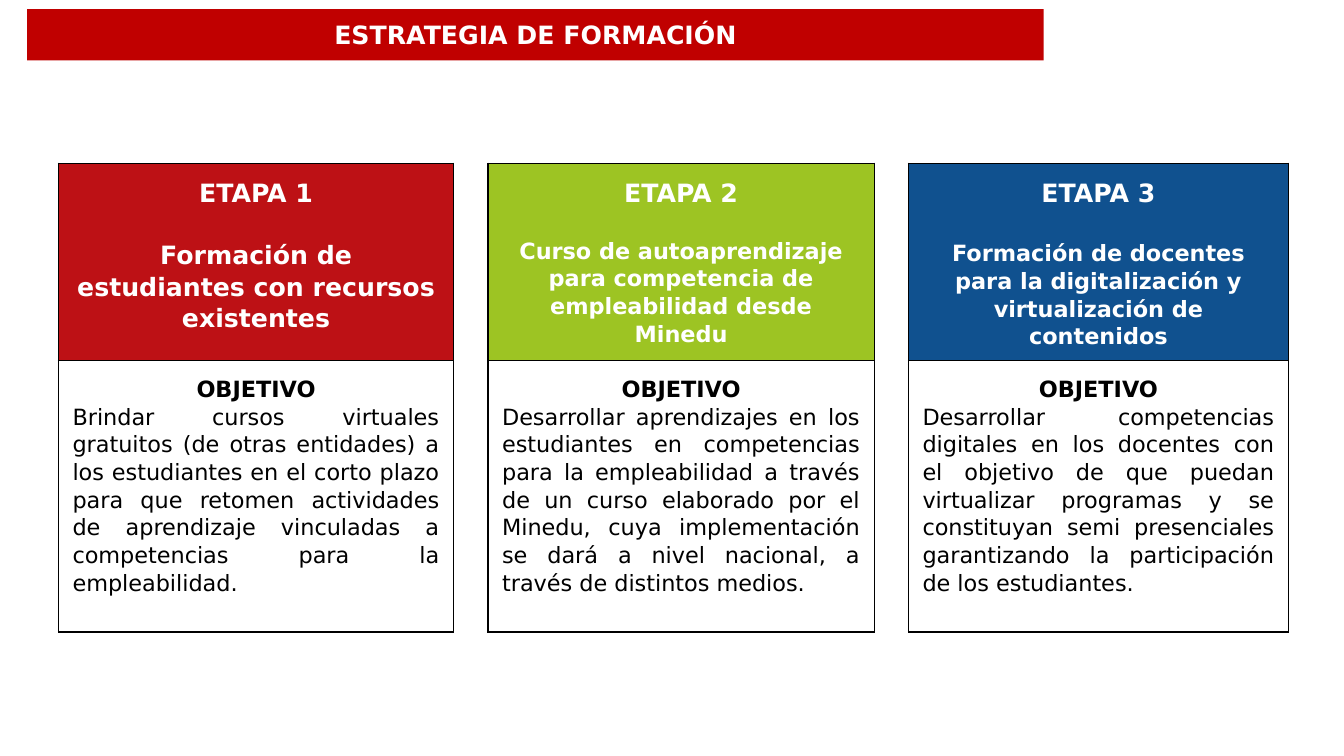
from dataclasses import dataclass
from pptx import Presentation
from pptx.dml.color import RGBColor as RGB
from pptx.enum.shapes import MSO_SHAPE as SHAPE
from pptx.enum.text import MSO_ANCHOR as ANCHOR, PP_ALIGN as ALIGN
from pptx.oxml import parse_xml
from pptx.oxml.ns import nsdecls
from pptx.util import Inches, Pt


@dataclass(frozen=True)
class Theme:
    font: str = "DejaVu Sans"
    title: str = "C00000"
    stages: tuple = ("BD1115", "9DC423", "10518F")
    white: str = "FFFFFF"
    black: str = "000000"
    big: int = 18
    body: int = 16
    edge: int = 1


theme = Theme()


def style(para, text, size, color, bold=True, align=ALIGN.CENTER):
    para.text = text
    para.alignment = align
    font = para.font
    font.name, font.size, font.bold = theme.font, Pt(size), bold
    font.color.rgb = RGB.from_string(color)


def add_box(left, top, width, height, fill):
    """Add a one-cell table with a black border and return its two paragraphs."""
    table = slide.shapes.add_table(1, 1, Inches(left), Inches(top),
                                   Inches(width), Inches(height)).table
    table.first_row = table.horz_banding = False
    cell = table.cell(0, 0)
    cell.margin_left = cell.margin_right = Inches(0.14)
    cell.margin_top = cell.margin_bottom = Inches(0.14)
    props = cell._tc.get_or_add_tcPr()
    for side in "LRTB":
        props.append(parse_xml(
            f'<a:ln{side} {nsdecls("a")} w="{Pt(theme.edge)}"><a:solidFill>'
            f'<a:srgbClr val="{theme.black}"/></a:solidFill></a:ln{side}>'))
    cell.fill.solid()
    cell.fill.fore_color.rgb = RGB.from_string(fill)
    frame = cell.text_frame
    paras = frame.paragraphs[0], frame.add_paragraph()
    for para in paras:
        para.line_spacing = 1.07
    return paras


# width, heading size, gap above heading in points, heading, goal
stages = [
    (3.92, theme.big, 22, "Formación de estudiantes con recursos existentes",
     "Brindar cursos virtuales gratuitos (de otras entidades) a los estudiantes "
     "en el corto plazo para que retomen actividades de aprendizaje vinculadas "
     "a competencias para la empleabilidad."),
    (3.83, theme.body, 20,
     "Curso de autoaprendizaje para competencia de empleabilidad desde Minedu",
     "Desarrollar aprendizajes en los estudiantes en competencias para la "
     "empleabilidad a través de un curso elaborado por el Minedu, cuya "
     "implementación se dará a nivel nacional, a través de distintos medios."),
    (3.77, theme.body, 22,
     "Formación de docentes para la digitalización y virtualización de contenidos",
     "Desarrollar competencias digitales en los docentes con el objetivo de que "
     "puedan virtualizar programas y se constituyan semi presenciales "
     "garantizando la participación de los estudiantes."),
]

deck = Presentation()
deck.slide_width, deck.slide_height = Inches(13.33), Inches(7.5)
slide = deck.slides.add_slide(deck.slide_layouts[6])

title = slide.shapes.add_shape(SHAPE.RECTANGLE, Inches(0.27), Inches(0.09),
                               Inches(10.08), Inches(0.51))
title.shadow.inherit = False
title.fill.solid()
title.fill.fore_color.rgb = RGB.from_string(theme.title)
title.line.fill.background()
title.text_frame.word_wrap = True
title.text_frame.vertical_anchor = ANCHOR.MIDDLE
style(title.text_frame.paragraphs[0], "ESTRATEGIA DE FORMACIÓN",
      theme.big, theme.white)

left, gutter = 0.58, 0.34
for num, (width, size, gap, name, goal) in enumerate(stages, 1):
    label, head = add_box(left, 1.62, width, 1.96, theme.stages[num - 1])
    style(label, f"ETAPA {num}", theme.big, theme.white)
    style(head, name, size, theme.white)
    head.space_before = Pt(gap)

    label, text = add_box(left, 3.58, width, 2.69, theme.white)
    style(label, "OBJETIVO", theme.body, theme.black)
    style(text, goal, theme.body, theme.black, False, ALIGN.JUSTIFY)
    left += width + gutter

deck.save("out.pptx")
